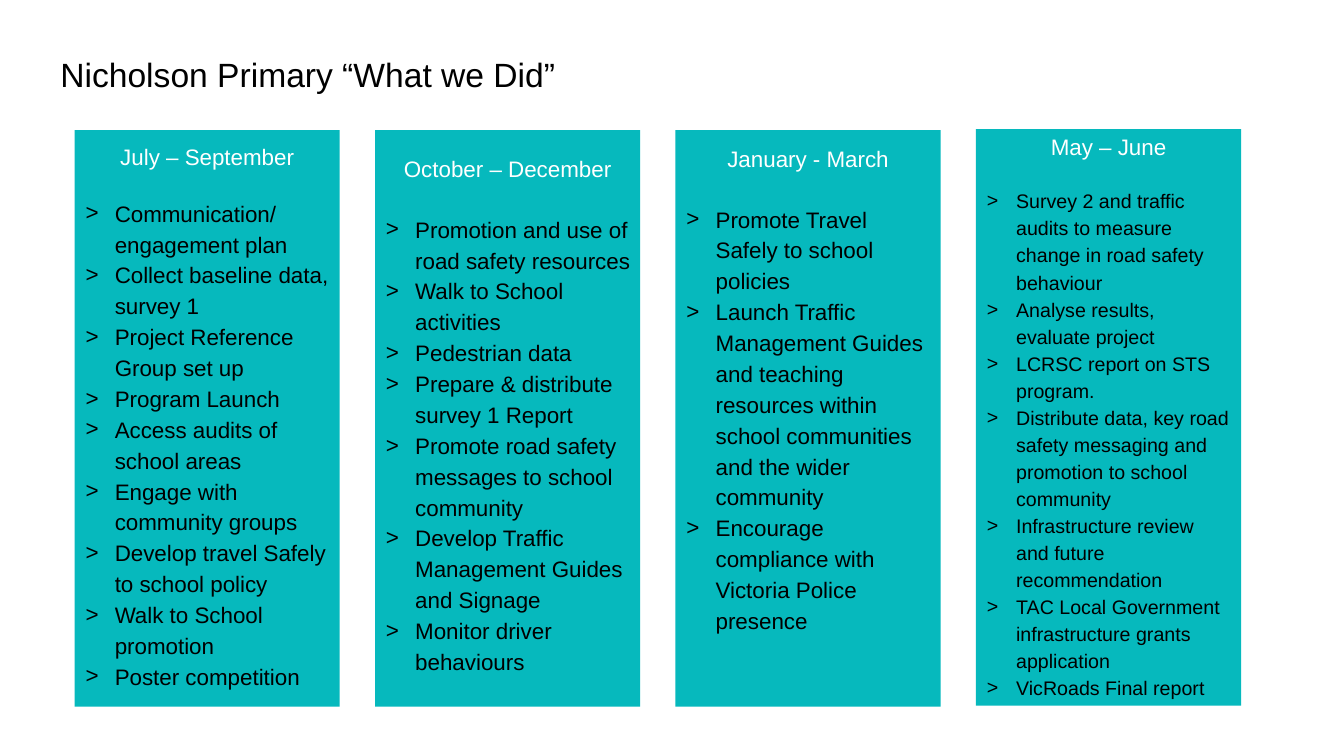
"""Build the slide of what Nicholson Primary did in each quarter."""
import dataclasses
import typing

import lxml.etree
import pptx
import pptx.dml.color
import pptx.enum.shapes
import pptx.enum.text
import pptx.oxml.ns
import pptx.util

Inches = pptx.util.Inches
Pt = pptx.util.Pt
RGBColor = pptx.dml.color.RGBColor
Align = pptx.enum.text.PP_ALIGN

TEAL = RGBColor(0x06, 0xB9, 0xBD)
WHITE = RGBColor(0xFF, 0xFF, 0xFF)
BLACK = RGBColor(0x00, 0x00, 0x00)

LEFT, STEP, WIDTH, HEIGHT = 0.74, 2.98, 2.63, 5.72
HEAD = {"alignment": Align.CENTER}
ITEM = {"alignment": Align.LEFT, "level": 1, "line_spacing": 1.15}


@dataclasses.dataclass
class Card:
    head: str
    items: list[str]
    top: float = 1.29
    inset: float = 0.13
    gap: float = 21.2
    size: int = 16


CARDS = [
    Card("July – September", [
        "Communication/ engagement plan",
        "Collect baseline data, survey 1",
        "Project Reference Group set up",
        "Program Launch",
        "Access audits of school areas",
        "Engage with community groups",
        "Develop travel Safely to school policy",
        "Walk to School promotion",
        "Poster competition",
    ], gap=18.4),
    Card("October – December", [
        "Promotion and use of road safety resources",
        "Walk to School activities",
        "Pedestrian data",
        "Prepare & distribute survey 1 Report",
        "Promote road safety messages to school community",
        "Develop Traffic Management Guides and Signage",
        "Monitor driver behaviours",
    ], inset=0.25),
    Card("January - March", [
        "Promote Travel Safely to school policies",
        "Launch Traffic Management Guides and teaching resources "
        "within school communities and the wider community",
        "Encourage compliance with Victoria Police presence",
    ], inset=0.15),
    Card("May – June", [
        "Survey 2 and traffic audits to measure change in road safety behaviour",
        "Analyse results, evaluate project",
        "LCRSC report on STS program.",
        "Distribute data, key road safety messaging and promotion "
        "to school community",
        "Infrastructure review and future recommendation",
        "TAC Local Government infrastructure grants application",
        "VicRoads Final report",
    ], top=1.28, inset=0.04, gap=18.5, size=14),
]


def apply(target: typing.Any, form: dict[str, typing.Any]) -> None:
    """Set each format value on the target."""
    for name, value in form.items():
        setattr(target, name, value)


def write(para: typing.Any, text: str, size: int, color: RGBColor,
          form: dict[str, typing.Any]) -> None:
    """Fill a paragraph with one run of text."""
    apply(para, form)
    run = para.add_run()
    run.text = text
    apply(run.font, {"name": "Arial", "size": Pt(size)})
    run.font.color.rgb = color


def mark(para: typing.Any) -> None:
    """Give a paragraph its hanging bullet."""
    props = para._p.get_or_add_pPr()
    props.set("marL", str(Inches(0.3)))
    props.set("indent", str(Inches(-0.29)))
    for tag, key, value in (("a:buFont", "typeface", "Arial"),
                            ("a:buChar", "char", ">")):
        node = lxml.etree.SubElement(props, pptx.oxml.ns.qn(tag))
        node.set(key, value)


def draw_card(slide: typing.Any, card: Card, left: float) -> None:
    """Draw one quarter with its heading and list."""
    box = slide.shapes.add_shape(
        pptx.enum.shapes.MSO_SHAPE.RECTANGLE,
        Inches(left), Inches(card.top), Inches(WIDTH), Inches(HEIGHT))
    box.shadow.inherit = False
    box.fill.solid()
    box.fill.fore_color.rgb = TEAL
    box.line.fill.background()
    frame = box.text_frame
    apply(frame, {"word_wrap": True, "margin_top": Inches(card.inset),
                  "vertical_anchor": pptx.enum.text.MSO_ANCHOR.TOP})
    write(frame.paragraphs[0], card.head, 16, WHITE, HEAD)
    for rank, item in enumerate(card.items):
        para = frame.add_paragraph()
        mark(para)
        space = {"space_before": Pt(0 if rank else card.gap)}
        write(para, item, card.size, BLACK, ITEM | space)


def draw_title(slide: typing.Any, text: str) -> None:
    """Draw the slide title."""
    box = slide.shapes.add_textbox(
        Inches(0.5), Inches(0.29), Inches(9.5), Inches(0.63))
    box.text_frame.word_wrap = True
    write(box.text_frame.paragraphs[0], text, 24, BLACK, {"line_spacing": 1.5})


def main() -> None:
    """Build and save the deck."""
    deck = pptx.Presentation()
    apply(deck, {"slide_width": Inches(13.33), "slide_height": Inches(7.5)})
    slide = deck.slides.add_slide(deck.slide_layouts[6])
    draw_title(slide, "Nicholson Primary “What we Did”")
    for place, card in enumerate(CARDS):
        draw_card(slide, card, LEFT + STEP * place)
    deck.save("out.pptx")


if __name__ == "__main__":
    main()
